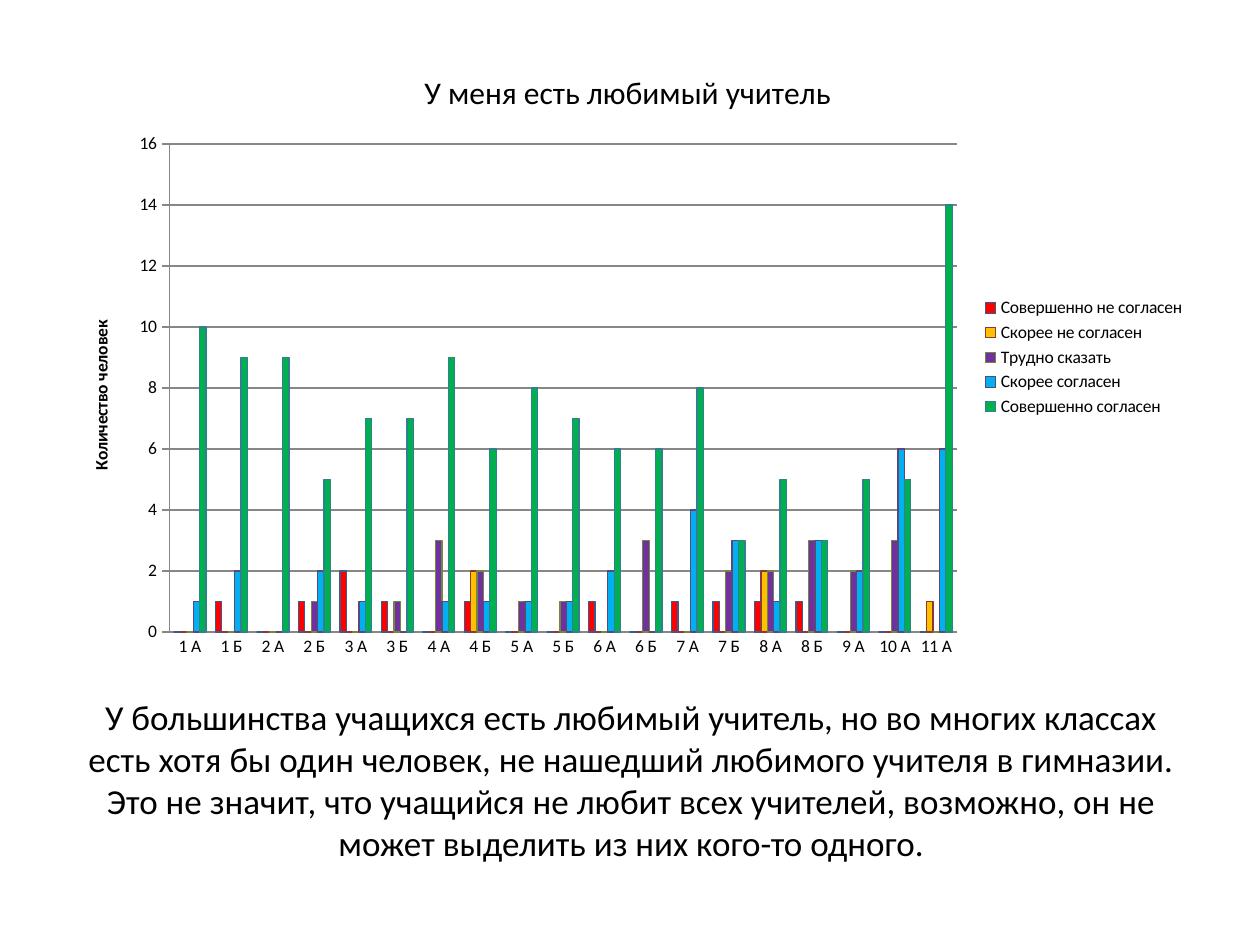
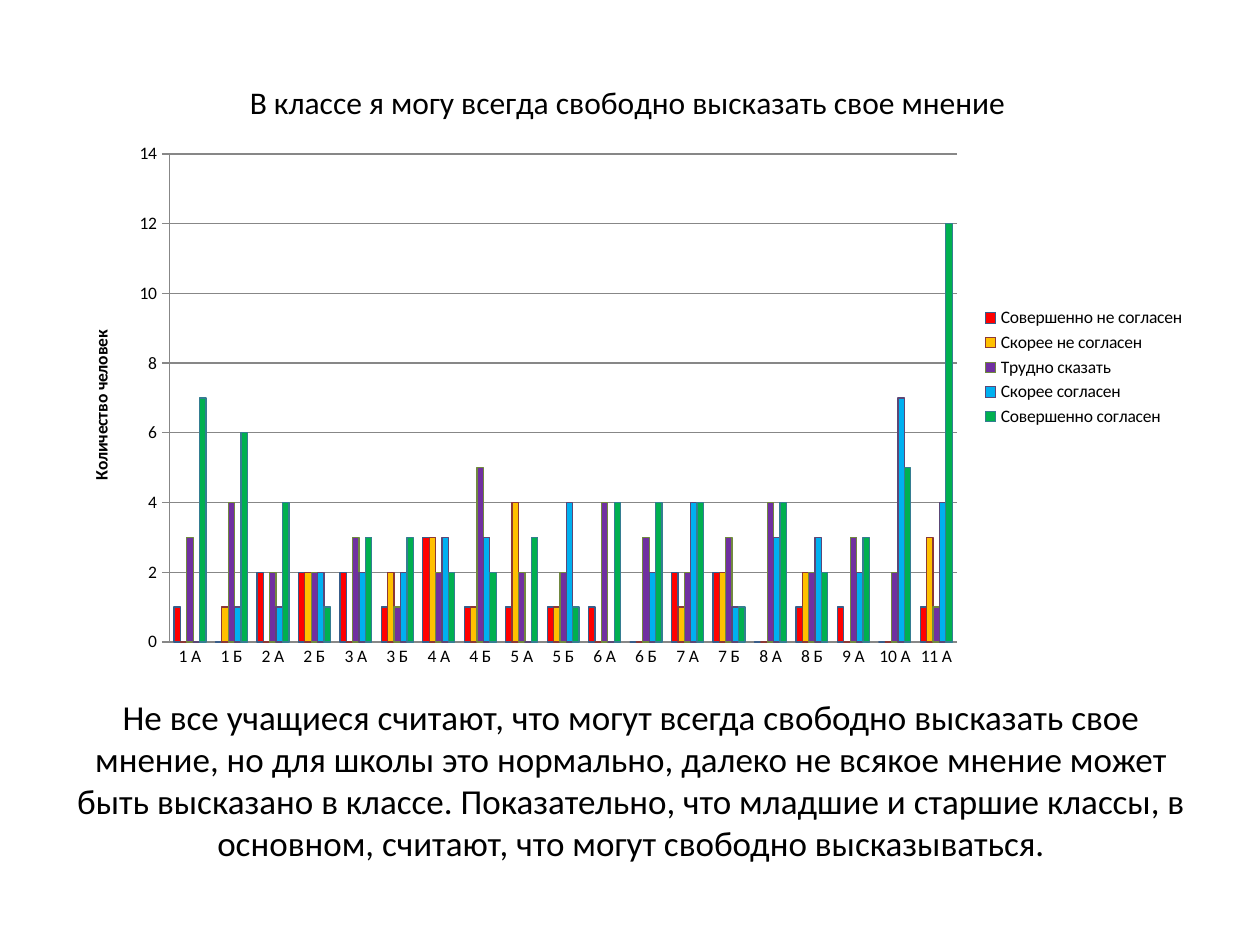
from pptx import Presentation
from pptx.chart.data import CategoryChartData
from pptx.dml.color import RGBColor
from pptx.enum.chart import XL_CHART_TYPE, XL_LEGEND_POSITION, XL_TICK_MARK
from pptx.enum.text import MSO_ANCHOR, PP_ALIGN
from pptx.util import Pt

FONT = "Calibri"
INK = "000000"
GRID = "878787"
LEFT, WIDTH = 36.72, 648
AXIS = "Количество человек"
CLASSES = [f"{year} {mark}" for year in range(1, 9) for mark in "АБ"]
CLASSES += ["9 А", "10 А", "11 А"]
ANSWERS = [
    ("Совершенно не согласен", "FF0000", "385D8A"),
    ("Скорее не согласен", "FFC000", "8C3836"),
    ("Трудно сказать", "7030A0", "71893F"),
    ("Скорее согласен", "00B0F0", "5C4776"),
    ("Совершенно согласен", "00B050", "357D91"),
]
SLIDES = [
    (
        "У меня есть любимый учитель ",
        26,
        [
            [0, 1, 0, 1, 2, 1, 0, 1, 0, 0, 1, 0, 1, 1, 1, 1, 0, 0, 0],
            [0, 0, 0, 0, 0, 0, 0, 2, 0, 0, 0, 0, 0, 0, 2, 0, 0, 0, 1],
            [0, 0, 0, 1, 0, 1, 3, 2, 1, 1, 0, 3, 0, 2, 2, 3, 2, 3, 0],
            [1, 2, 0, 2, 1, 0, 1, 1, 1, 1, 2, 0, 4, 3, 1, 3, 2, 6, 6],
            [10, 9, 9, 5, 7, 7, 9, 6, 8, 7, 6, 6, 8, 3, 5, 3, 5, 5, 14],
        ],
        "У большинства учащихся есть любимый учитель, но во многих классах "
        "есть хотя бы один человек, не нашедший любимого учителя в гимназии. "
        "Это не значит, что учащийся не любит всех учителей, возможно, он не "
        "может выделить из них кого-то одного.",
    ),
    (
        "В классе я могу всегда свободно высказать свое мнение ",
        31.7,
        [
            [1, 0, 2, 2, 2, 1, 3, 1, 1, 1, 1, 0, 2, 2, 0, 1, 1, 0, 1],
            [0, 1, 0, 2, 0, 2, 3, 1, 4, 1, 0, 0, 1, 2, 0, 2, 0, 0, 3],
            [3, 4, 2, 2, 3, 1, 2, 5, 2, 2, 4, 3, 2, 3, 4, 2, 3, 2, 1],
            [0, 1, 1, 2, 2, 2, 3, 3, 0, 4, 0, 2, 4, 1, 3, 3, 2, 7, 4],
            [7, 6, 4, 1, 3, 3, 2, 2, 3, 1, 4, 4, 4, 1, 4, 2, 3, 5, 12],
        ],
        "Не все учащиеся считают, что могут всегда свободно высказать свое "
        "мнение, но для школы это нормально, далеко не всякое мнение может "
        "быть высказано в классе. Показательно, что младшие и старшие классы, "
        "в основном, считают, что могут свободно высказываться.",
    ),
]


def color(code):
    return RGBColor.from_string(code)


def style(font, size, bold=False):
    font.name = FONT
    font.size = Pt(size)
    font.bold = bold
    font.color.rgb = color(INK)


def write(frame, text, size=10, bold=False, align=PP_ALIGN.CENTER):
    para = frame.paragraphs[0]
    para.alignment = align
    run = para.add_run()
    run.text = text
    style(run.font, size, bold)


def draw(line, code, width=0.75):
    line.color.rgb = color(code)
    line.width = Pt(width)


class Deck:
    def __init__(self):
        self.file = Presentation()
        self.file.slide_width = Pt(720)
        self.file.slide_height = Pt(540)
        self.slide = None

    def page(self):
        self.slide = self.file.slides.add_slide(self.file.slide_layouts[6])

    def text(self, text, top, height, size):
        box = self.slide.shapes.add_textbox(
            Pt(LEFT), Pt(top), Pt(WIDTH), Pt(height))
        frame = box.text_frame
        frame.word_wrap = True
        frame.vertical_anchor = MSO_ANCHOR.MIDDLE
        write(frame, text, size=size)

    def chart(self, title, top, height, rows):
        data = CategoryChartData()
        data.categories = CLASSES
        for (name, _, _), row in zip(ANSWERS, rows):
            data.add_series(name, row)
        chart = self.slide.shapes.add_chart(
            XL_CHART_TYPE.COLUMN_CLUSTERED,
            Pt(LEFT), Pt(top), Pt(WIDTH), Pt(height), data).chart
        style(chart.font, 10)
        chart.has_title = True
        write(chart.chart_title.text_frame, title, size=18)
        chart.chart_title.include_in_layout = False
        chart.has_legend = True
        chart.legend.position = XL_LEGEND_POSITION.RIGHT
        chart.legend.include_in_layout = False
        self.axes(chart)
        self.bars(chart.plots[0])

    def axes(self, chart):
        base, scale = chart.category_axis, chart.value_axis
        base.major_tick_mark = XL_TICK_MARK.NONE
        scale.major_tick_mark = XL_TICK_MARK.OUTSIDE
        scale.has_major_gridlines = True
        for line in (base.format.line, scale.format.line,
                     scale.major_gridlines.format.line):
            draw(line, GRID)
        write(scale.axis_title.text_frame, AXIS, bold=True)

    def bars(self, plot):
        plot.gap_width = 150
        plot.overlap = 0
        plot.vary_by_categories = False
        for item, (_, fill, edge) in zip(plot.series, ANSWERS):
            item.invert_if_negative = False
            item.format.fill.solid()
            item.format.fill.fore_color.rgb = color(fill)
            draw(item.format.line, edge)


def main():
    deck = Deck()
    for title, top, rows, note in SLIDES:
        deck.page()
        deck.text(note, 400.32, 90, 20)
        deck.chart(title, top, 356.4, rows)
    deck.file.save("out.pptx")


if __name__ == "__main__":
    main()
